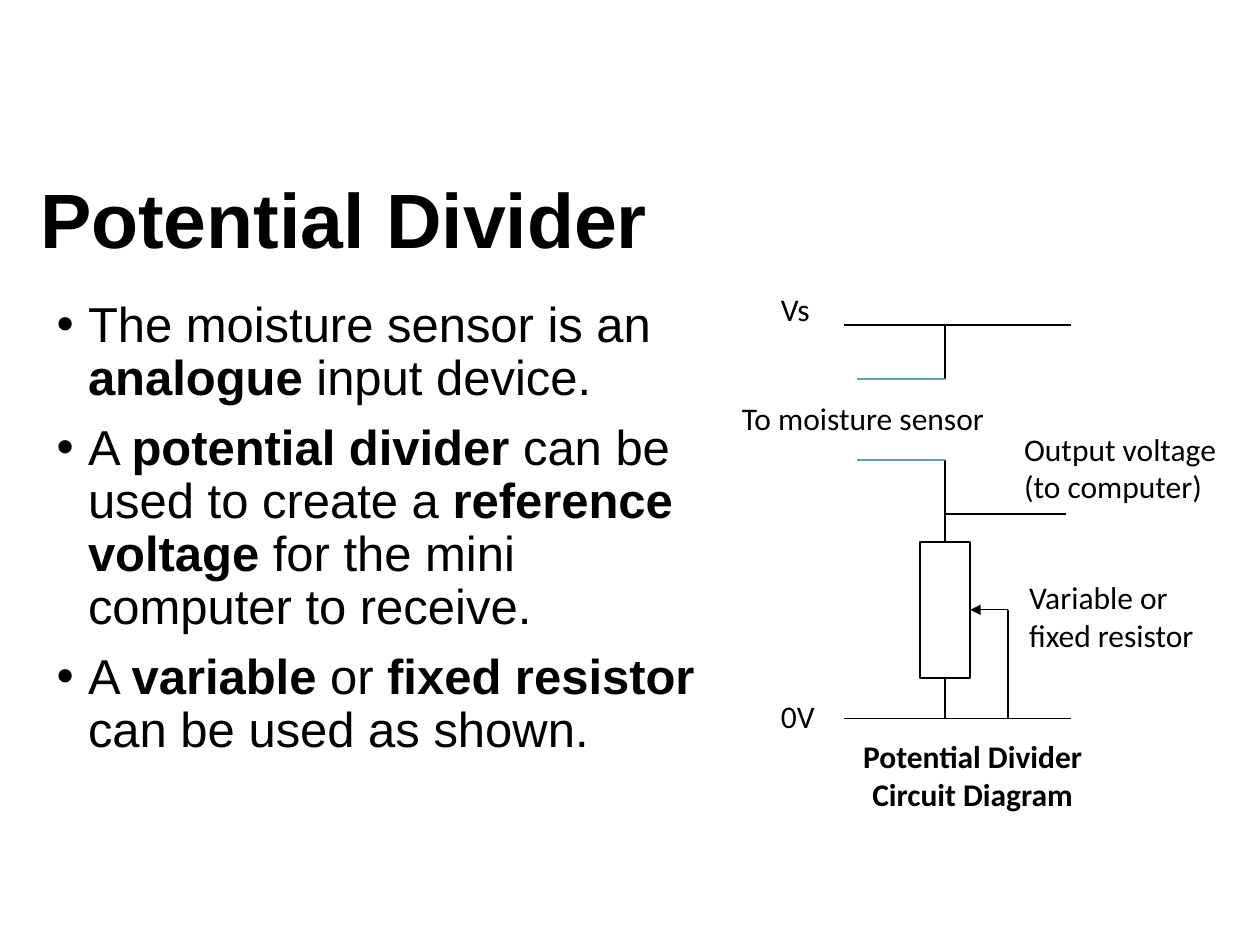
from lxml.etree import SubElement
from pptx import Presentation
from pptx.dml.color import RGBColor
from pptx.enum.shapes import MSO_CONNECTOR, MSO_SHAPE
from pptx.enum.text import MSO_ANCHOR, PP_ALIGN
from pptx.oxml.ns import qn
from pptx.util import Inches, Pt

BLACK = RGBColor(0x00, 0x00, 0x00)
WHITE = RGBColor(0xFF, 0xFF, 0xFF)
BLUE = RGBColor(0x5B, 0x9B, 0xD5)

# Circuit geometry in inches
RAIL_LEFT, RAIL_RIGHT = 6.7, 8.5
SUPPLY_Y, GROUND_Y = 2.58, 5.7
MAIN_X, WIPER_X, PROBE_X = 7.5, 8, 6.8
PROBE_TOP, PROBE_BOTTOM = 3.01, 3.65
OUTPUT_Y, WIPER_Y = 4.08, 4.84
RESISTOR_WIDTH, RESISTOR_TOP, RESISTOR_HEIGHT = 0.4, 4.3, 1.08

# Each bullet is a list of (text, bold) spans
BULLETS = [
    [("The moisture sensor is an ", False), ("analogue", True),
     (" input device.", False)],
    [("A ", False), ("potential divider ", True),
     ("can be used to create a ", False), ("reference voltage", True),
     (" for the mini computer to receive.", False)],
    [("A ", False), ("variable", True), (" or ", False),
     ("fixed resistor ", True), ("can be used as shown.", False)],
]

LABELS = [
    ("Vs", (6.1, 2.25, 0.7, 0.4)),
    ("0V", (6.1, 5.48, 0.7, 0.55)),
    ("To moisture sensor", (5.79, 3.12, 2.68, 0.4)),
    ("Variable or fixed resistor", (8.07, 4.54, 1.6, 0.71)),
    ("Output voltage (to computer)", (8.03, 3.36, 1.97, 0.71)),
]


def add_box(page, area, anchor=MSO_ANCHOR.TOP):
    frame = page.shapes.add_textbox(*map(Inches, area)).text_frame
    frame.word_wrap = True
    frame.vertical_anchor = anchor
    return frame


def add_span(para, text, size=18, font="Calibri", bold=False):
    span = para.add_run()
    span.text = text
    span.font.name = font
    span.font.size = Pt(size)
    span.font.bold = bold
    span.font.color.rgb = BLACK


def add_text(page, text, area, align=PP_ALIGN.LEFT, anchor=MSO_ANCHOR.TOP,
             spacing=None, **style):
    para = add_box(page, area, anchor).paragraphs[0]
    para.alignment = align
    para.line_spacing = spacing
    add_span(para, text, **style)


def set_bullet(para):
    props = para._p.get_or_add_pPr()
    props.set("marL", str(Inches(0.25)))
    props.set("indent", str(-Inches(0.25)))
    SubElement(props, qn("a:buFont"), typeface="Arial")
    SubElement(props, qn("a:buChar"), char="•")


def add_bullets(page, bullets, area):
    frame = add_box(page, area)
    for index, spans in enumerate(bullets):
        para = frame.add_paragraph() if index else frame.paragraphs[0]
        set_bullet(para)
        para.line_spacing = 0.9
        para.space_before = Pt(10 if index else 0)
        for text, bold in spans:
            add_span(para, text, size=28, font="Arial", bold=bold)


def add_wire(page, start, end, color=BLACK, width=0.75, arrow=False):
    wire = page.shapes.add_connector(
        MSO_CONNECTOR.STRAIGHT, *map(Inches, (*start, *end)))
    wire.line.color.rgb = color
    wire.line.width = Pt(width)
    if arrow:
        SubElement(wire.line._get_or_add_ln(), qn("a:tailEnd"), type="triangle")
    SubElement(wire._element.spPr, qn("a:effectLst"))


def add_resistor(page):
    area = (MAIN_X - RESISTOR_WIDTH / 2, RESISTOR_TOP,
            RESISTOR_WIDTH, RESISTOR_HEIGHT)
    resistor = page.shapes.add_shape(MSO_SHAPE.RECTANGLE, *map(Inches, area))
    resistor.shadow.inherit = False
    resistor.fill.solid()
    resistor.fill.fore_color.rgb = WHITE
    resistor.line.color.rgb = BLACK
    resistor.line.width = Pt(1)


def add_circuit(page):
    for y in (SUPPLY_Y, GROUND_Y):
        add_wire(page, (RAIL_LEFT, y), (RAIL_RIGHT, y))
    add_resistor(page)
    for top, bottom in ((SUPPLY_Y, PROBE_TOP), (PROBE_BOTTOM, RESISTOR_TOP),
                        (RESISTOR_TOP + RESISTOR_HEIGHT, GROUND_Y)):
        add_wire(page, (MAIN_X, top), (MAIN_X, bottom))
    add_wire(page, (MAIN_X, OUTPUT_Y), (8.46, OUTPUT_Y))
    add_wire(page, (WIPER_X, WIPER_Y),
             (MAIN_X + RESISTOR_WIDTH / 2, WIPER_Y), arrow=True)
    add_wire(page, (WIPER_X, WIPER_Y), (WIPER_X, GROUND_Y))
    for y in (PROBE_TOP, PROBE_BOTTOM):
        add_wire(page, (MAIN_X, y), (PROBE_X, y), color=BLUE, width=1)


def main():
    deck = Presentation()
    deck.slide_width, deck.slide_height = Inches(10), Inches(7.5)
    page = deck.slides.add_slide(deck.slide_layouts[6])
    add_text(page, "Potential Divider", (0.22, 1.15, 9, 1.25), spacing=0.9,
             anchor=MSO_ANCHOR.MIDDLE, size=44, font="Arial", bold=True)
    add_bullets(page, BULLETS, (0.35, 2.33, 5.35, 4.17))
    add_circuit(page)
    for text, area in LABELS:
        add_text(page, text, area)
    add_text(page, "Potential Divider Circuit Diagram", (6.5, 5.8, 2.44, 0.71),
             align=PP_ALIGN.CENTER, bold=True)
    deck.save("out.pptx")


if __name__ == "__main__":
    main()
